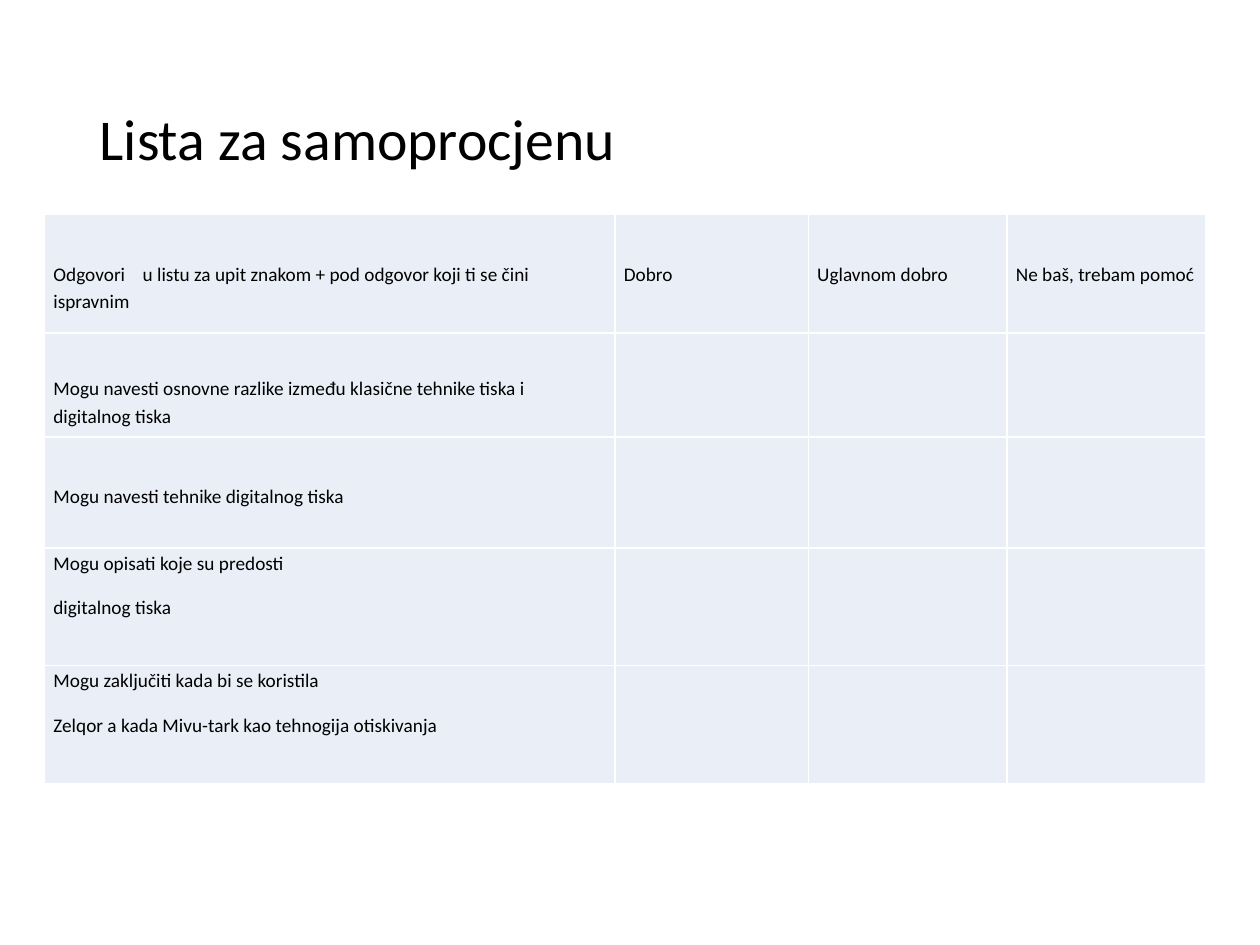
from dataclasses import dataclass

from lxml.etree import SubElement
from pptx import Presentation
from pptx.dml.color import RGBColor
from pptx.enum.text import MSO_ANCHOR as Anchor, MSO_AUTO_SIZE as AutoSize, PP_ALIGN as Align
from pptx.oxml.ns import qn
from pptx.util import Pt


@dataclass(frozen=True)
class Theme:
    font: str = "Calibri"
    ink: str = "000000"
    cell: str = "EAEFF7"
    border: str = "FFFFFF"
    title_size: int = 33
    cell_size: int = 11


theme = Theme()


def write(frame, text, size, line=1.0, after=0, tab=None):
    """Fill a text frame, one paragraph per line of text."""
    frame.text = text
    for paragraph in frame.paragraphs:
        paragraph.alignment = Align.LEFT
        paragraph.line_spacing = line
        paragraph.space_before = Pt(0)
        paragraph.space_after = Pt(after)
        if tab:
            stops = SubElement(paragraph._p.get_or_add_pPr(), qn("a:tabLst"))
            SubElement(stops, qn("a:tab"), pos=str(Pt(tab)), algn="l")
        for run in paragraph.runs:
            run.font.name = theme.font
            run.font.size = Pt(size)
            run.font.color.rgb = RGBColor.from_string(theme.ink)


def style_cell(cell):
    """Set the fill and the thin borders of a table cell."""
    properties = cell._tc.get_or_add_tcPr()
    for side in ("a:lnL", "a:lnR", "a:lnT", "a:lnB"):
        border = SubElement(properties, qn(side), w=str(Pt(1)))
        color = SubElement(border, qn("a:solidFill"))
        SubElement(color, qn("a:srgbClr"), val=theme.border)
    cell.fill.solid()
    cell.fill.fore_color.rgb = RGBColor.from_string(theme.cell)


prs = Presentation()
prs.slide_width, prs.slide_height = Pt(720), Pt(540)
slide = prs.slides.add_slide(prs.slide_layouts[5])

# Title
title = slide.shapes.title
title.left, title.top, title.width, title.height = Pt(49.7), Pt(28.8), Pt(620.6), Pt(104.4)
title.text_frame.auto_size = AutoSize.NONE
title.text_frame.vertical_anchor = Anchor.MIDDLE
write(title.text_frame, "Lista za samoprocjenu", theme.title_size, line=0.9)

# Checklist: row height, space above the text, texts
checklist = [
    (67.5, 25.4, ["Odgovori\tu listu za upit znakom + pod odgovor koji ti se čini ispravnim",
                  "Dobro", "Uglavnom dobro", "Ne baš, trebam pomoć"]),
    (59.5, 23.4, ["Mogu navesti osnovne razlike između klasične tehnike tiska i digitalnog tiska"]),
    (63.5, 25.4, ["Mogu navesti tehnike digitalnog tiska"]),
    (67, 0, ["Mogu opisati koje su predosti\ndigitalnog tiska"]),
    (67.5, 0, ["Mogu zaključiti kada bi se koristila\n"
               "Zelqor a kada Mivu-tark kao tehnogija otiskivanja"]),
]
column_widths = [326, 110.5, 113.5, 113.5]

table = slide.shapes.add_table(
    len(checklist), len(column_widths), Pt(25.5), Pt(122.7),
    Pt(sum(column_widths)), Pt(sum(height for height, _, _ in checklist))).table
table.first_row = table.horz_banding = False
for column, width in zip(table.columns, column_widths):
    column.width = Pt(width)

for row, (height, space_above, texts) in zip(table.rows, checklist):
    row.height = Pt(height)
    for cell in row.cells:
        style_cell(cell)
    for cell, text in zip(row.cells, texts):
        cell.margin_left = cell.margin_right = Pt(5)
        cell.margin_top, cell.margin_bottom = Pt(space_above), Pt(0)
        write(cell.text_frame, text, theme.cell_size, line=1.15, after=10,
              tab=51 if "\t" in text else None)

prs.save("out.pptx")
